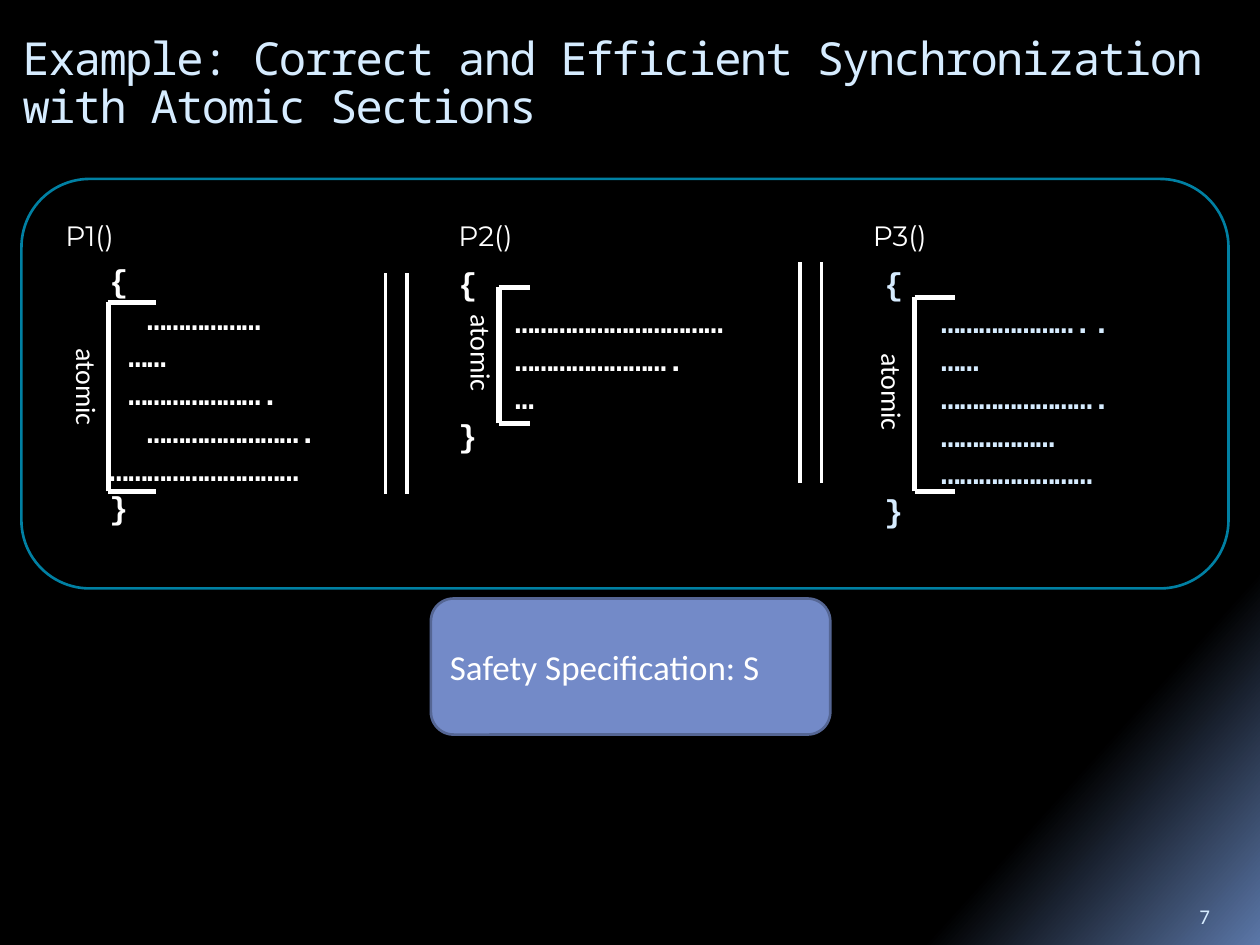
from dataclasses import dataclass

from lxml import etree
from pptx import Presentation
from pptx.dml.color import RGBColor
from pptx.enum.shapes import MSO_CONNECTOR, MSO_SHAPE
from pptx.enum.text import MSO_ANCHOR, MSO_AUTO_SIZE, PP_ALIGN
from pptx.oxml.ns import qn
from pptx.util import Inches, Pt

BLACK = RGBColor(0x00, 0x00, 0x00)
WHITE = RGBColor(0xFF, 0xFF, 0xFF)
PALE_BLUE = RGBColor(0xD6, 0xEC, 0xFF)
TEAL = RGBColor(0x00, 0x80, 0xA3)
BLUE = RGBColor(0x73, 0x8A, 0xC8)
DARK_BLUE = RGBColor(0x55, 0x66, 0x94)
GLOW = RGBColor(0x5B, 0x77, 0xA8)

STRAIGHT = MSO_CONNECTOR.STRAIGHT
ROUNDED = MSO_SHAPE.ROUNDED_RECTANGLE
TOP, MIDDLE, BOTTOM = MSO_ANCHOR.TOP, MSO_ANCHOR.MIDDLE, MSO_ANCHOR.BOTTOM
LEFT = PP_ALIGN.LEFT
NO_FIT = MSO_AUTO_SIZE.NONE

CHARACTER = 0.15
TITLE_FORMAT = {"name": "Noto Sans Mono", "size": Pt(26)}
CODE_FORMAT = {"name": "Courier New", "size": Pt(18), "bold": True}
NAME_FORMAT = {"name": "Montserrat", "size": Pt(16)}
ATOMIC_FORMAT = {"name": "Calibri", "size": Pt(16)}
SAFETY_FORMAT = {"name": "Calibri", "size": Pt(20)}
NUMBER_FORMAT = {"name": "Calibri", "size": Pt(12)}


@dataclass
class Area:
    left: float
    top: float
    width: float
    height: float

    def lengths(self) -> tuple:
        return tuple(map(Inches, (self.left, self.top, self.width, self.height)))


@dataclass
class Line:
    text: str
    indent: int = 0


@dataclass
class Bracket:
    left: float
    top: float
    bottom: float
    arm: float
    label: Area


@dataclass
class Process:
    name: str
    name_area: Area
    code_area: Area
    color: RGBColor
    lines: list[Line]
    bracket: Bracket


@dataclass
class ParallelBars:
    left: float
    top: float


PROCESSES = [
    Process("P1()", Area(0.42, 1.58, 2.25, 0.58), Area(0.77, 2.02, 2.32, 2.22), WHITE,
            [Line("………………", 2), Line("……", 1), Line("………………….", 1),
             Line("…………………….", 2), Line("…………………………")],
            Bracket(0.86, 2.4, 3.9, 0.38, Area(0.26, 2.91, 0.86, 0.37))),
    Process("P2()", Area(3.54, 1.58, 1.67, 0.58), Area(3.54, 2.05, 2.5, 1.6), WHITE,
            [Line("……………………………", 3), Line("…………………….", 3), Line("…", 3)],
            Bracket(3.96, 2.28, 3.36, 0.25, Area(3.39, 2.64, 0.86, 0.37))),
    Process("P3()", Area(6.83, 1.58, 2.25, 0.58), Area(6.92, 2.05, 2.42, 2.2), PALE_BLUE,
            [Line("…………………..", 3), Line("……", 3), Line("…………………….", 3),
             Line("………………", 3), Line("……………………", 3)],
            Bracket(7.26, 2.36, 3.9, 0.32, Area(6.65, 2.95, 0.86, 0.37))),
]
BARS = [ParallelBars(3.06, 2.17), ParallelBars(6.35, 2.08)]
BAR_GAP = 0.17
BAR_HEIGHT = 1.75


def write_lines(box, lines: list[Line], formats: dict, color: RGBColor,
                anchor=TOP, wrap: bool = True) -> None:
    frame = box.text_frame
    for key, value in {"auto_size": NO_FIT, "word_wrap": wrap,
                       "vertical_anchor": anchor}.items():
        setattr(frame, key, value)
    for index, line in enumerate(lines):
        para = frame.paragraphs[0] if index == 0 else frame.add_paragraph()
        para.alignment = LEFT
        if line.indent:
            margin = Inches(line.indent * CHARACTER)
            para._p.get_or_add_pPr().set("marL", str(margin))
        span = para.add_run()
        span.text = line.text
        for key, value in formats.items():
            setattr(span.font, key, value)
        span.font.color.rgb = color


def add_text(page, area: Area, lines: list[Line], formats: dict, color: RGBColor,
             anchor=TOP, wrap: bool = True):
    box = page.shapes.add_textbox(*area.lengths())
    write_lines(box, lines, formats, color, anchor, wrap)
    return box


def add_line(page, start: tuple[float, float], end: tuple[float, float],
             weight: float) -> None:
    line = page.shapes.add_connector(STRAIGHT, *map(Inches, (*start, *end)))
    line.line.color.rgb = WHITE
    line.line.width = Pt(weight)
    etree.SubElement(line._element.spPr, qn("a:effectLst"))


def add_rounded_box(page, area: Area, outline: RGBColor, fill: RGBColor | None = None):
    box = page.shapes.add_shape(ROUNDED, *area.lengths())
    box.shadow.inherit = False
    box.line.color.rgb = outline
    box.line.width = Pt(1.5)
    if fill is None:
        box.fill.background()
    else:
        box.fill.solid()
        box.fill.fore_color.rgb = fill
    return box


def add_bracket(page, bracket: Bracket) -> None:
    add_line(page, (bracket.left, bracket.bottom), (bracket.left, bracket.top), 3)
    for y in (bracket.top, bracket.bottom):
        add_line(page, (bracket.left, y), (bracket.left + bracket.arm, y), 3)
    label = add_text(page, bracket.label, [Line("atomic")], ATOMIC_FORMAT, WHITE, wrap=False)
    label.rotation = 90


def add_process(page, process: Process) -> None:
    code = [Line("{"), *process.lines, Line("}")]
    add_text(page, process.code_area, code, CODE_FORMAT, process.color)
    add_text(page, process.name_area, [Line(process.name)], NAME_FORMAT, WHITE, MIDDLE)
    add_bracket(page, process.bracket)


def paint_background(page) -> None:
    fill = page.background.fill
    fill.gradient()
    fill.gradient_angle = 318
    for stop, position, color in zip(fill.gradient_stops, (0.84, 1), (BLACK, GLOW)):
        stop.position = position
        stop.color.rgb = color


def add_title(page, text: str) -> None:
    title = page.shapes.title
    title.left, title.top, title.width, title.height = Area(0.08, 0.25, 9.82, 1.25).lengths()
    write_lines(title, [Line(text)], TITLE_FORMAT, PALE_BLUE)
    para = title.text_frame.paragraphs[0]
    para.line_spacing = 0.87
    para.space_before = Pt(3)
    para.runs[0].font._element.set("spc", "-100")


def main() -> None:
    deck = Presentation()
    deck.slide_width, deck.slide_height = Inches(10), Inches(7.5)
    page = deck.slides.add_slide(deck.slide_layouts[5])
    paint_background(page)
    add_title(page, "Example: Correct and Efficient Synchronization with Atomic Sections")
    add_rounded_box(page, Area(0.17, 1.42, 9.58, 3.25), TEAL)
    for process in PROCESSES:
        add_process(page, process)
    for bars in BARS:
        for x in (bars.left, bars.left + BAR_GAP):
            add_line(page, (x, bars.top), (x, bars.top + BAR_HEIGHT), 2)
    safety = add_rounded_box(page, Area(3.42, 4.75, 3.17, 1.08), DARK_BLUE, BLUE)
    write_lines(safety, [Line("Safety Specification: S")], SAFETY_FORMAT, WHITE, MIDDLE)
    add_text(page, Area(9.42, 7.02, 0.5, 0.4), [Line("7")], NUMBER_FORMAT, PALE_BLUE, BOTTOM)
    deck.save("out.pptx")


if __name__ == "__main__":
    main()
